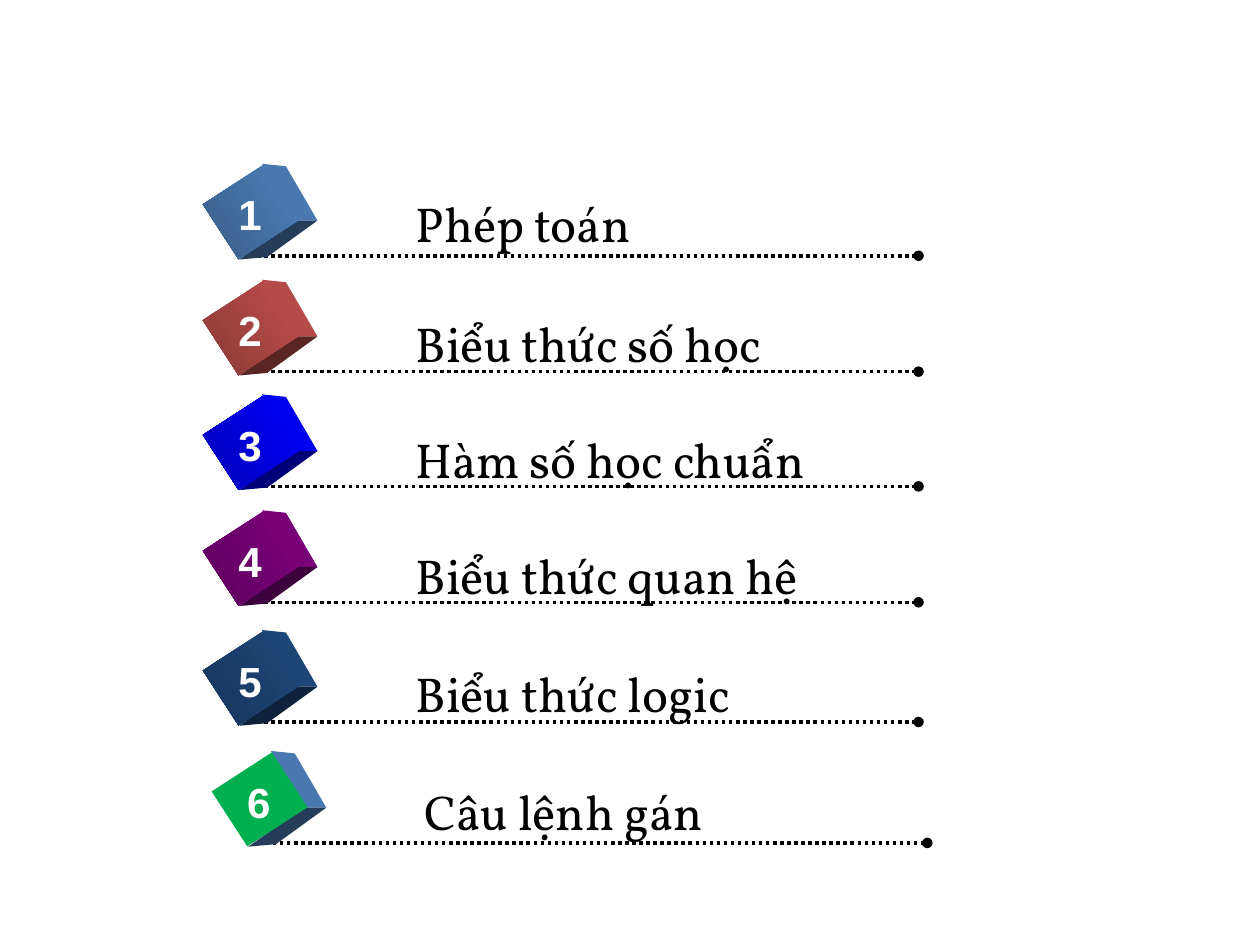
from lxml import etree
from pptx import Presentation
from pptx.dml.color import RGBColor
from pptx.enum.dml import MSO_LINE
from pptx.enum.shapes import MSO_CONNECTOR, MSO_SHAPE
from pptx.enum.text import MSO_AUTO_SIZE, PP_ALIGN
from pptx.oxml.ns import qn
from pptx.util import Inches, Pt

DOTTED = MSO_LINE.ROUND_DOT
STRAIGHT = MSO_CONNECTOR.STRAIGHT
RECTANGLE = MSO_SHAPE.RECTANGLE
FIT = MSO_AUTO_SIZE.SHAPE_TO_FIT_TEXT
LEFT, CENTER = PP_ALIGN.LEFT, PP_ALIGN.CENTER

BLACK = RGBColor(0x00, 0x00, 0x00)
WHITE = RGBColor(0xFF, 0xFF, 0xFF)
BLUE = RGBColor(0x4F, 0x81, 0xBD)
BLUE_DARK = RGBColor(0x39, 0x5C, 0x87)
BLUE_SIDE = RGBColor(0x4A, 0x79, 0xB2)
BLUE_BASE = RGBColor(0x26, 0x3D, 0x5A)
RED = RGBColor(0xC0, 0x50, 0x4D)
RED_DARK = RGBColor(0x89, 0x39, 0x37)
RED_SIDE = RGBColor(0xB4, 0x4B, 0x48)
RED_BASE = RGBColor(0x5A, 0x26, 0x24)
PURE_BLUE = RGBColor(0x00, 0x00, 0xFF)
PURE_BLUE_DARK = RGBColor(0x00, 0x00, 0xB6)
PURE_BLUE_SIDE = RGBColor(0x00, 0x00, 0xF0)
PURE_BLUE_BASE = RGBColor(0x00, 0x00, 0x78)
PURPLE = RGBColor(0x80, 0x00, 0x80)
PURPLE_DARK = RGBColor(0x5C, 0x00, 0x5C)
PURPLE_SIDE = RGBColor(0x78, 0x00, 0x78)
PURPLE_BASE = RGBColor(0x3C, 0x00, 0x3C)
NAVY = RGBColor(0x1F, 0x49, 0x7D)
NAVY_DARK = RGBColor(0x16, 0x34, 0x59)
NAVY_SIDE = RGBColor(0x1D, 0x45, 0x76)
NAVY_BASE = RGBColor(0x0F, 0x22, 0x3B)
GREEN = RGBColor(0x00, 0xB0, 0x50)

RIGHT_FACE = [(0.35, -0.1), (0.54, -0.08), (0.79, 0.35), (0.61, 0.35)]
BOTTOM_FACE = [(0.61, 0.35), (0.79, 0.35), (0.39, 0.64), (0.17, 0.66)]

ITEMS = [
    ("Phép toán", 1.73, 1.4, 1.91, 0.09, (BLUE, BLUE_DARK, BLUE_SIDE, BLUE_BASE)),
    ("Biểu thức số học", 1.73, 2.32, 3.02, 0.12, (RED, RED_DARK, RED_SIDE, RED_BASE)),
    ("Hàm số học chuẩn", 1.73, 3.23, 3.33, 0.13,
     (PURE_BLUE, PURE_BLUE_DARK, PURE_BLUE_SIDE, PURE_BLUE_BASE)),
    ("Biểu thức quan hệ", 1.73, 4.15, 3.3, 0.13,
     (PURPLE, PURPLE_DARK, PURPLE_SIDE, PURPLE_BASE)),
    ("Biểu thức logic", 1.73, 5.1, 2.76, 0.12,
     (NAVY, NAVY_DARK, NAVY_SIDE, NAVY_BASE)),
    ("Câu lệnh gán", 1.8, 6.06, 2.42, 0.09, (GREEN, GREEN, BLUE_SIDE, BLUE_BASE)),
]


def add_rule(s, x, y, width):
    rule = s.shapes.add_connector(
        STRAIGHT, Inches(x), Inches(y), Inches(x + width), Inches(y))
    rule.line.color.rgb = BLACK
    rule.line.width = Pt(2)
    rule.line.dash_style = DOTTED
    etree.SubElement(rule.line._get_or_add_ln(), qn("a:tailEnd"), type="oval")
    etree.SubElement(rule._element.spPr, qn("a:effectLst"))


def add_face(s, x, y, corners, color):
    points = [(Inches(x + dx), Inches(y + dy)) for dx, dy in corners]
    builder = s.shapes.build_freeform(*points[0])
    builder.add_line_segments(points[1:], close=True)
    face = builder.convert_to_shape()
    face.shadow.inherit = False
    face.fill.solid()
    face.fill.fore_color.rgb = color
    face.line.fill.background()


def add_cube(s, x, y, colors):
    light, dark, side, base = colors
    add_face(s, x, y, RIGHT_FACE, side)
    add_face(s, x, y, BOTTOM_FACE, base)
    front = s.shapes.add_shape(
        RECTANGLE, Inches(x), Inches(y), Inches(0.52), Inches(0.57))
    front.rotation = 57
    front.shadow.inherit = False
    front.line.fill.background()
    if light == dark:
        front.fill.solid()
        front.fill.fore_color.rgb = light
    else:
        front.fill.gradient()
        front.fill.gradient_angle = 270
        for stop, color in zip(front.fill.gradient_stops, (light, dark)):
            stop.color.rgb = color


def add_text(s, box, text, font, size, color, align=LEFT, bold=False):
    tf = s.shapes.add_textbox(*(Inches(v) for v in box)).text_frame
    tf.word_wrap = False
    tf.auto_size = FIT
    p = tf.paragraphs[0]
    p.alignment = align
    r = p.add_run()
    r.text = text
    r.font.name = font
    r.font.size = Pt(size)
    r.font.bold = bold
    r.font.color.rgb = color


def add_item(s, number, label, x, y, label_width, label_drop, colors):
    add_rule(s, x + 0.31, y + 0.63, 5.25)
    add_cube(s, x, y, colors)
    add_text(s, (x + 1.47, y + label_drop, label_width, 0.57),
             label, "Vollkorn", 28, BLACK)
    add_text(s, (x + 0.06, y + 0.05, 0.39, 0.5),
             str(number), "Arial", 24, WHITE, CENTER, True)


def main():
    prs = Presentation()
    prs.slide_width, prs.slide_height = Inches(10), Inches(7.5)
    s = prs.slides.add_slide(prs.slide_layouts[6])
    for number, item in enumerate(ITEMS, 1):
        add_item(s, number, *item)
    prs.save("out.pptx")


if __name__ == "__main__":
    main()
